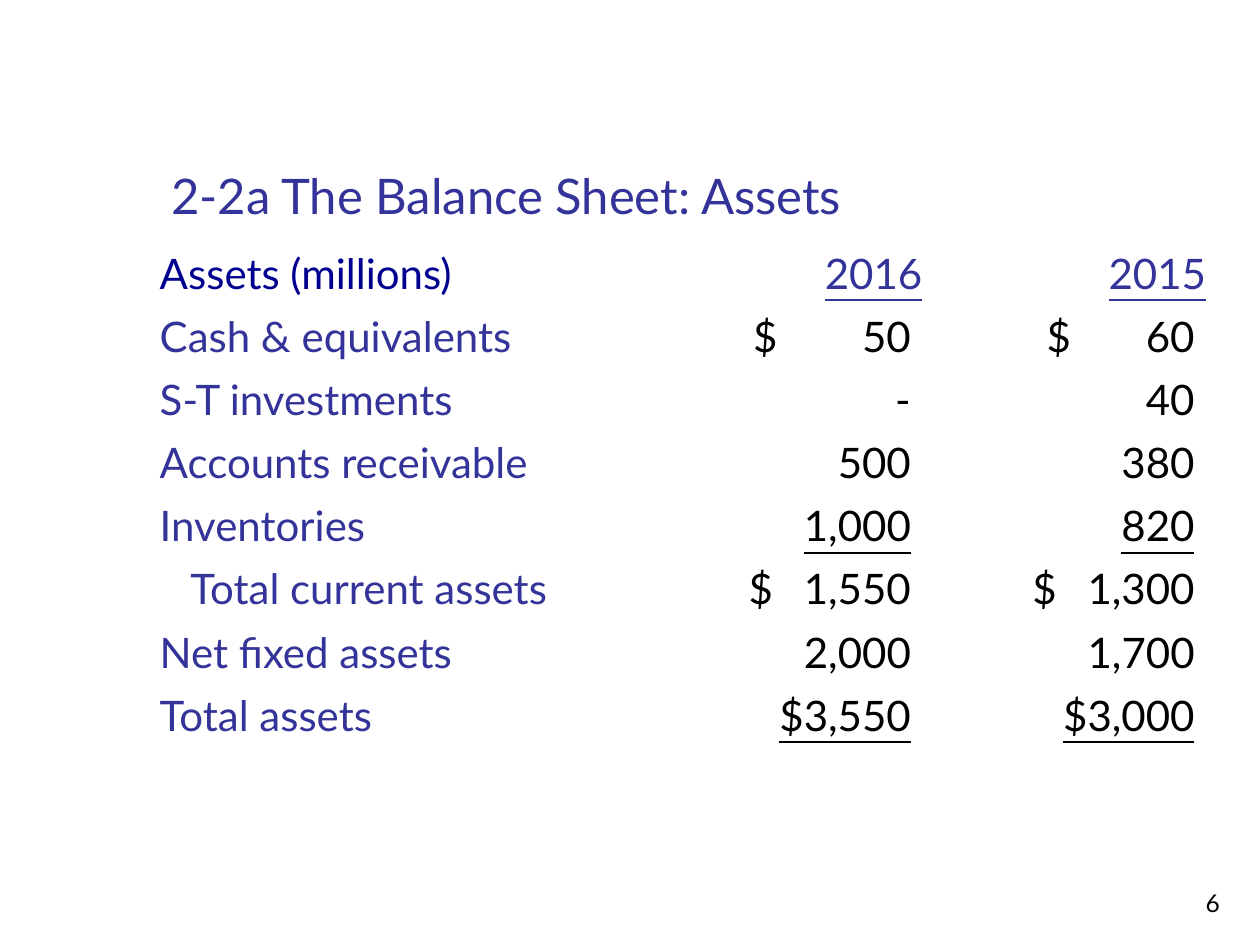
from lxml.etree import SubElement
from pptx import Presentation
from pptx.dml.color import RGBColor
from pptx.enum.text import MSO_ANCHOR, PP_ALIGN
from pptx.oxml.ns import qn
from pptx.util import Cm, Pt

FONT = "Lato"
COLORS = {"label": "333399", "heading": "000090", "figure": "000000"}

TITLE = "2-2a The Balance Sheet: Assets"
PAGE_NUMBER = "6"
HEADINGS = ("Assets (millions)", "2016", "2015")
ROWS = [
    ("Cash & equivalents", "50", "60"),
    ("S-T investments", "-", "40"),
    ("Accounts receivable", "500", "380"),
    ("Inventories", "1,000", "820"),
    ("Total current assets", "1,550", "1,300"),
    ("Net fixed assets", "2,000", "1,700"),
    ("Total assets", "$3,550", "$3,000"),
]
INDENTED = {"Total current assets"}
UNDERLINED = {"Inventories", "Total assets"}
# Distance in cm from a detached dollar sign to the right edge of its figure
DOLLAR_GAPS = {
    "Cash & equivalents": (3.18, 2.98),
    "Total current assets": (3.27, 3.27),
}

COLUMN_WIDTHS = (8.89, 6.98, 5.72)
ROW_HEIGHT = 1.27
MARGIN = 0.25
FIGURE_MARGIN = 0.48
INDENT = 0.62


def write(paragraph, text, size, color, align=PP_ALIGN.LEFT, underline=False):
    paragraph.text = text
    paragraph.alignment = align
    for span in paragraph.runs:
        span.font.name = FONT
        span.font.size = Pt(size)
        span.font.color.rgb = RGBColor.from_string(COLORS[color])
        span.font.underline = underline


def add_text(page, place, text, size, color, align=PP_ALIGN.LEFT):
    box = page.shapes.add_textbox(*(Cm(length) for length in place))
    frame = box.text_frame
    frame.word_wrap = True
    frame.vertical_anchor = MSO_ANCHOR.BOTTOM
    write(frame.paragraphs[0], text, size, color, align)


def add_right_tab(para, position):
    tabs = SubElement(para._p.get_or_add_pPr(), qn("a:tabLst"))
    SubElement(tabs, qn("a:tab"), pos=str(Cm(position)), algn="r")


def fill_figure(cell, width, text, underline, gap):
    """Right-align a figure, with a detached dollar sign when gap is given."""
    para = cell.text_frame.paragraphs[0]
    if gap:
        cell.margin_left = Cm(width - FIGURE_MARGIN - gap)
        add_right_tab(para, gap)
        write(para, f"$\t{text}", 24, "figure")
    else:
        cell.margin_right = Cm(FIGURE_MARGIN)
        write(para, text, 24, "figure", PP_ALIGN.RIGHT, underline)


def add_balance_sheet(page):
    row_count = len(ROWS) + 1
    table = page.shapes.add_table(
        row_count, len(HEADINGS), Cm(2.97), Cm(4.88),
        Cm(sum(COLUMN_WIDTHS)), Cm(ROW_HEIGHT * row_count)).table
    table.first_row = table.horz_banding = False
    for column, width in zip(table.columns, COLUMN_WIDTHS):
        column.width = Cm(width)
    for row in table.rows:
        row.height = Cm(ROW_HEIGHT)
    for cell in table.iter_cells():
        cell.fill.background()
        cell.margin_left = cell.margin_right = Cm(MARGIN)

    for index, heading in enumerate(HEADINGS):
        para = table.cell(0, index).text_frame.paragraphs[0]
        if index == 0:
            write(para, heading, 24, "heading")
        else:
            write(para, heading, 24, "label", PP_ALIGN.RIGHT, True)

    for row_index, (label, *figures) in enumerate(ROWS, start=1):
        label_cell = table.cell(row_index, 0)
        if label in INDENTED:
            label_cell.margin_left = Cm(MARGIN + INDENT)
        write(label_cell.text_frame.paragraphs[0], label, 24, "label")
        gaps = DOLLAR_GAPS.get(label, (None, None))
        for index, (figure, gap) in enumerate(zip(figures, gaps), start=1):
            fill_figure(table.cell(row_index, index), COLUMN_WIDTHS[index],
                        figure, label in UNDERLINED, gap)


def main():
    deck = Presentation()
    deck.slide_width, deck.slide_height = Cm(25.4), Cm(19.05)
    page = deck.slides.add_slide(deck.slide_layouts[6])
    add_text(page, (19.56, 17.35, 5.28, 1.27), PAGE_NUMBER, 14, "figure",
             PP_ALIGN.RIGHT)
    add_text(page, (3.2, 0.58, 21.64, 4.06), TITLE, 28, "label")
    add_balance_sheet(page)
    deck.save("out.pptx")


if __name__ == "__main__":
    main()
